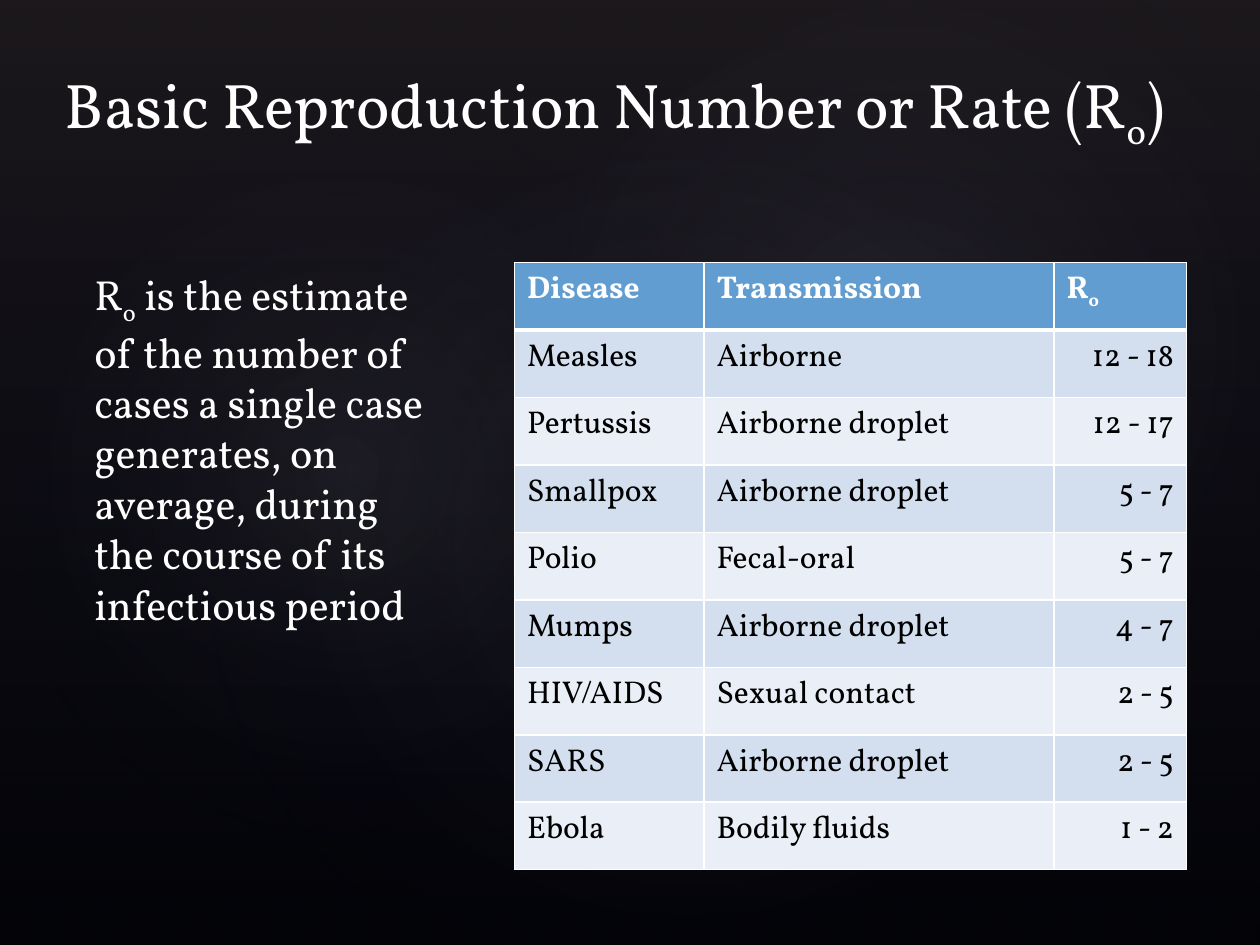
import pptx
import pptx.util
import pptx.dml.color
import pptx.enum.shapes
import pptx.enum.text
import pptx.oxml
import pptx.oxml.ns

Pt = pptx.util.Pt
RGBColor = pptx.dml.color.RGBColor
MSO_SHAPE = pptx.enum.shapes.MSO_SHAPE
ALIGN = pptx.enum.text.PP_ALIGN
ANCHOR = pptx.enum.text.MSO_ANCHOR

BLACK = RGBColor(0x00, 0x00, 0x00)
WHITE = RGBColor(0xFF, 0xFF, 0xFF)
MAUVE = RGBColor(0x50, 0x46, 0x52)
NAVY = RGBColor(0x24, 0x28, 0x52)
LILAC = RGBColor(0xC4, 0xBC, 0xC6)
BLUE = RGBColor(0x62, 0x9D, 0xD1)
PALE = RGBColor(0xD3, 0xDF, 0xEE)
LIGHT = RGBColor(0xEA, 0xEF, 0xF7)
FONT = "Vollkorn"
LINEAR = '<a:lin ang="5400000" scaled="0"/>'
ROUND = '<a:path path="circle"><a:fillToRect l="50000" t="50000" r="50000" b="50000"/></a:path>'


def add_glow(kind, box, turn, stops, mode):
    shape = slide.shapes.add_shape(kind, *map(Pt, box))
    shape.rotation = turn
    shape.shadow.inherit = False
    shape.line.fill.background()
    shape.fill.background()
    marks = "".join(
        f'<a:gs pos="{pos * 1000}"><a:srgbClr val="{color}">'
        f'<a:alpha val="{alpha * 1000}"/></a:srgbClr></a:gs>'
        for pos, color, alpha in stops)
    grad = pptx.oxml.parse_xml(
        f'<a:gradFill {pptx.oxml.ns.nsdecls("a")} rotWithShape="1">'
        f'<a:gsLst>{marks}</a:gsLst>{mode}</a:gradFill>')
    props = shape._element.spPr
    props.replace(props.find(pptx.oxml.ns.qn("a:noFill")), grad)


def write(frame, parts, size, color, bold=False):
    para = frame.paragraphs[0]
    para.font.name = FONT
    para.font.size = Pt(size)
    para.font.bold = bold
    para.font.color.rgb = color
    for spot, part in enumerate(parts):
        run = para.add_run()
        run.text = part
        if spot == 1:
            run._r.get_or_add_rPr().set("baseline", "-25000")
    return para


deck = pptx.Presentation()
deck.slide_width, deck.slide_height = Pt(720), Pt(540)
slide = deck.slides.add_slide(deck.slide_layouts[6])
slide.background.fill.solid()
slide.background.fill.fore_color.rgb = BLACK

add_glow(MSO_SHAPE.RECTANGLE, (0, 0, 720, 540), 0,
         [(0, MAUVE, 36), (100, NAVY, 10)], LINEAR)
for box, turn, alpha in [
    ((108, 82.08, 570.24, 449.28), 328.7, 7),
    ((-21.6, 92.16, 436.32, 352.8), 294.3, 8),
    ((257.76, 9.36, 510.48, 374.4), 328.7, 8),
]:
    add_glow(MSO_SHAPE.OVAL, box, turn,
             [(0, LILAC, alpha), (58, NAVY, 0)], ROUND)

rows = [
    ("Disease", "Transmission", "R"),
    ("Measles", "Airborne", "12 - 18"),
    ("Pertussis", "Airborne droplet", "12 - 17"),
    ("Smallpox", "Airborne droplet", "5 - 7"),
    ("Polio", "Fecal-oral", "5 - 7"),
    ("Mumps", "Airborne droplet", "4 - 7"),
    ("HIV/AIDS", "Sexual contact", "2 - 5"),
    ("SARS", "Airborne droplet", "2 - 5"),
    ("Ebola", "Bodily fluids", "1 - 2"),
]
widths = [108.3, 200, 75.7]
tall = 38.56
table = slide.shapes.add_table(
    len(rows), len(widths), Pt(294), Pt(150),
    Pt(sum(widths)), Pt(tall * len(rows))).table
for col, width in zip(table.columns, widths):
    col.width = Pt(width)
for r, row in enumerate(rows):
    table.rows[r].height = Pt(tall)
    head = r == 0
    for c, text in enumerate(row):
        cell = table.cell(r, c)
        cell.fill.solid()
        cell.fill.fore_color.rgb = BLUE if head else (PALE if r % 2 else LIGHT)
        parts = [text, "o"] if head and c == 2 else [text]
        para = write(cell.text_frame, parts, 18, WHITE if head else BLACK, head)
        if c == 2 and not head:
            para.alignment = ALIGN.RIGHT
        for i, side in enumerate("LRTB"):
            thick = 3 if (r, side) in [(0, "B"), (1, "T")] else 1
            edge = pptx.oxml.parse_xml(
                f'<a:ln{side} {pptx.oxml.ns.nsdecls("a")} w="{Pt(thick)}">'
                f'<a:solidFill><a:srgbClr val="{WHITE}"/></a:solidFill></a:ln{side}>')
            cell._tc.get_or_add_tcPr().insert(i, edge)

for box, size, anchor, parts in [
    ((30, 18, 666, 72), 36, ANCHOR.BOTTOM,
     ["Basic Reproduction Number or Rate (R", "o", ")"]),
    ((46.8, 150, 210, 211), 24, ANCHOR.TOP,
     ["R", "o", " is the estimate of the number of cases a single case generates, "
      "on average, during the course of its infectious period"]),
]:
    frame = slide.shapes.add_textbox(*map(Pt, box)).text_frame
    frame.word_wrap = True
    frame.vertical_anchor = anchor
    write(frame, parts, size, WHITE)

deck.save("out.pptx")
